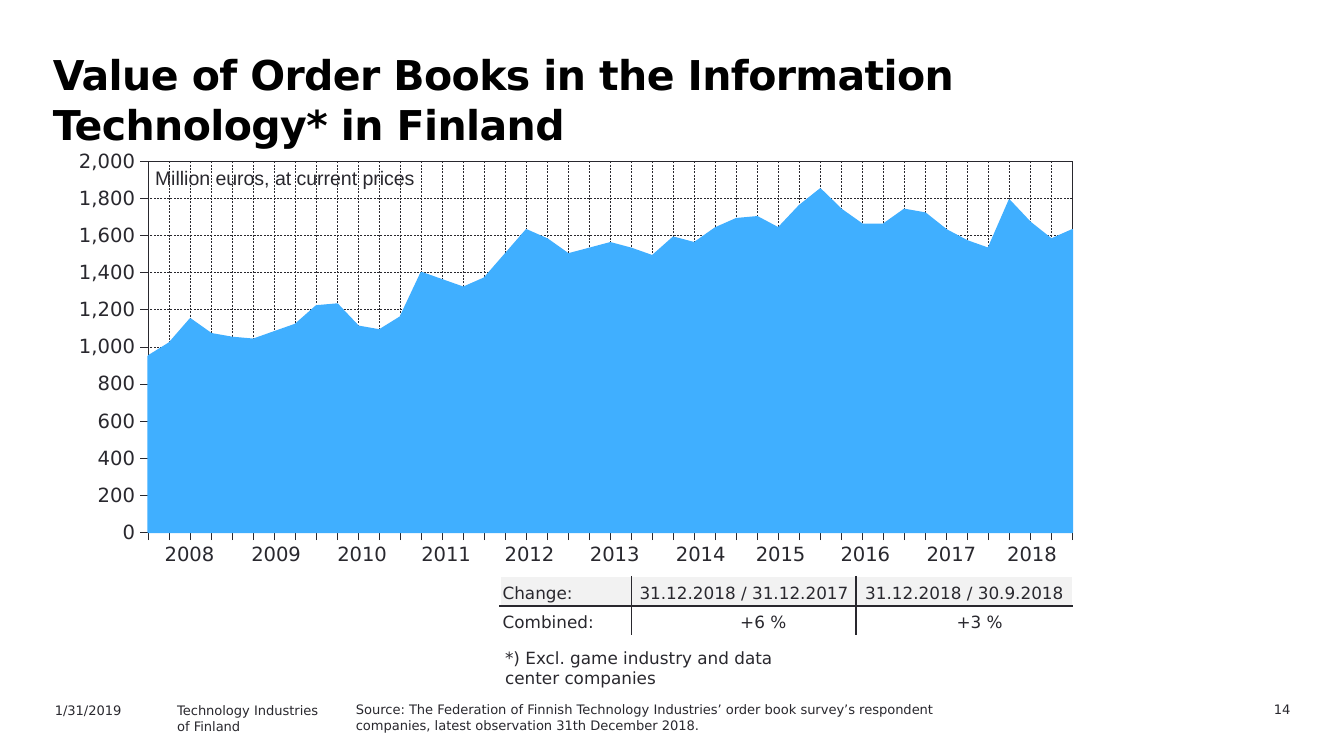
from lxml import etree
from pptx import Presentation
from pptx.chart.data import CategoryChartData
from pptx.dml.color import RGBColor
from pptx.enum.chart import XL_CHART_TYPE, XL_TICK_LABEL_POSITION, XL_TICK_MARK
from pptx.enum.dml import MSO_LINE
from pptx.enum.text import MSO_ANCHOR, PP_ALIGN
from pptx.oxml import parse_xml
from pptx.oxml.ns import nsdecls, qn
from pptx.util import Inches, Pt

COLORS = {"ink": "29282E", "black": "000000", "white": "FFFFFF",
          "area": "40AFFF", "header": "F2F2F2"}
COLS, ROWS = 100, 56.25
PLAIN_TABLE = "{2D5ABB26-0587-4C30-8999-92F81FD0307C}"
QUARTERS = [str(n) for n in range(1, 43)]
ORDERS = [950, 1020, 1150, 1070, 1050, 1040, 1080, 1120, 1220, 1230, 1110, 1090,
          1160, 1400, 1360, 1320, 1370, 1500, 1630, 1580, 1500, 1530, 1560, 1530,
          1490, 1590, 1560, 1640, 1690, 1700, 1640, 1760, 1850, 1740, 1660, 1660,
          1740, 1720, 1630, 1570, 1530, 1790, 1670, 1580, 1630]


def rgb(name):
    return RGBColor.from_string(COLORS[name])


class Deck:
    font = "DejaVu Sans"

    def __init__(self):
        self.prs = Presentation()
        self.prs.slide_width = Inches(10)
        self.prs.slide_height = self.prs.slide_width * 9 // 16
        self.s = self.prs.slides.add_slide(self.prs.slide_layouts[6])

    def x(self, cols):
        return round(self.prs.slide_width * cols / COLS)

    def y(self, rows):
        return round(self.prs.slide_height * rows / ROWS)

    def box(self, left, top, width, height):
        return self.x(left), self.y(top), self.x(width), self.y(height)

    def style(self, font, size, color="ink", bold=False, face=None):
        font.name, font.size, font.bold = face or self.font, Pt(size), bold
        font.color.rgb = rgb(color)

    def text(self, at, words, size, color="ink", bold=False, face=None,
             align=PP_ALIGN.LEFT, wrap=True):
        tf = self.s.shapes.add_textbox(*self.box(*at)).text_frame
        tf.word_wrap = wrap
        tf.text = words
        for p in tf.paragraphs:
            p.alignment = align
            for r in p.runs:
                self.style(r.font, size, color, bold, face)
        return tf

    def title(self, at, words):
        p = self.text(at, words, 22, "black", True).paragraphs[0]
        p.line_spacing = Pt(27)
        p._p.get_or_add_pPr().set("marL", str(self.x(0.15)))
        p.runs[0].font._element.set("spc", "-30")

    def table(self, at, widths, rows, size):
        tbl = self.s.shapes.add_table(len(rows), len(widths), *self.box(*at)).table
        tbl._tbl.tblPr.find(qn("a:tableStyleId")).text = PLAIN_TABLE
        tbl.first_row = tbl.horz_banding = False
        for col, width in zip(tbl.columns, widths):
            col.width = self.x(width)
        for row, words in zip(tbl.rows, rows):
            row.height = self.y(at[3] / len(rows))
            for cell, word in zip(row.cells, words):
                cell.text = word
                p = cell.text_frame.paragraphs[0]
                p.alignment = PP_ALIGN.CENTER
                self.style(p.runs[0].font, size)
                cell.fill.background()
        return tbl

    def ruled_table(self, at, widths, rows, size):
        tbl = self.table(at, widths, rows, size)
        last_row, last_col = len(rows) - 1, len(widths) - 1
        for i, row in enumerate(tbl.rows):
            for j, cell in enumerate(row.cells):
                cell.vertical_anchor = MSO_ANCHOR.BOTTOM
                cell.margin_left = cell.margin_right = self.x(0.2)
                cell.margin_top = cell.margin_bottom = self.y(0.2)
                p = cell.text_frame.paragraphs[0]
                if j == 0:
                    p.alignment = PP_ALIGN.LEFT
                elif i > 0:
                    p.alignment = PP_ALIGN.RIGHT
                    cell.margin_right = self.x(5.2)
                cell.fill.solid()
                cell.fill.fore_color.rgb = rgb("white" if i else "header")
                inner = {"L": j > 0, "R": j < last_col, "T": i > 0, "B": i < last_row}
                self.borders(cell, inner)

    def borders(self, cell, inner):
        tcPr = cell._tc.get_or_add_tcPr()
        for n, (side, ruled) in enumerate(inner.items()):
            color = COLORS["ink" if ruled else "white"]
            tcPr.insert(n, parse_xml(
                f'<a:ln{side} {nsdecls("a")} w="{Pt(1)}"><a:solidFill>'
                f'<a:srgbClr val="{color}"/></a:solidFill></a:ln{side}>'))

    def area_chart(self, at, categories, values, plot):
        data = CategoryChartData(number_format="#,##0")
        data.categories = categories
        data.add_series("Series 1", values)
        chart = self.s.shapes.add_chart(XL_CHART_TYPE.AREA_STACKED, *self.box(*at), data).chart
        chart.has_title = chart.has_legend = False
        self.style(chart.font, 18.2, bold=True, face="Arial")
        fmt = chart.plots[0].series[0].format
        fmt.fill.solid()
        fmt.fill.fore_color.rgb = rgb("area")
        fmt.line.color.rgb = rgb("area")
        fmt.line.width = Pt(0.88)
        for axis in (chart.category_axis, chart.value_axis):
            axis.major_tick_mark = XL_TICK_MARK.OUTSIDE
            axis.minor_tick_mark = XL_TICK_MARK.NONE
            axis.has_major_gridlines = True
            grid = axis.major_gridlines.format.line
            for line, width in ((axis.format.line, 0.22), (grid, 0.25)):
                line.color.rgb = rgb("ink")
                line.width = Pt(width)
            grid.dash_style = MSO_LINE.DASH
        chart.category_axis.tick_label_position = XL_TICK_LABEL_POSITION.NONE
        val = chart.value_axis
        val.minimum_scale, val.maximum_scale, val.major_unit = 0, 2000, 200
        val.tick_labels.number_format = "#,##0"
        val.tick_labels.number_format_is_linked = False
        self.style(val.tick_labels.font, 10.5)
        val._element.find(qn("c:crossBetween")).set("val", "midCat")
        self.frame_plot(chart, plot)

    def frame_plot(self, chart, plot):
        area = chart._chartSpace.chart.plotArea
        for old in area.findall(qn("c:layout")):
            area.remove(old)
        layout = parse_xml(f'<c:layout {nsdecls("c")}><c:manualLayout/></c:layout>')
        settings = [("layoutTarget", "inner"), ("xMode", "edge"), ("yMode", "edge"),
                    *zip("xywh", plot)]
        for tag, value in settings:
            etree.SubElement(layout[0], qn(f"c:{tag}")).set("val", str(value))
        area.insert(0, layout)
        area.append(parse_xml(
            f'<c:spPr {nsdecls("c", "a")}><a:noFill/><a:ln w="{Pt(0.22)}"><a:solidFill>'
            f'<a:srgbClr val="{COLORS["ink"]}"/></a:solidFill></a:ln></c:spPr>'))


def main():
    d = Deck()
    d.title((2.8, 3.1, 87.4, 7.1),
            "Value of Order Books in the Information Technology* in Finland")
    d.area_chart((4.15, 11.1, 91.8, 31.2), QUARTERS, ORDERS, (0.075, 0.029, 0.749, 0.885))
    d.table((11, 39.95, 68.9, 2.5),
            [6.2, 6.7, 6.1, 6.4, 6, 6.7, 6.1, 5.8, 6.8, 6, 6],
            [[str(year) for year in range(2008, 2019)]], 10.5)
    d.text((10.55, 11.85, 22.1, 2.7), "Million euros, at current prices", 10.5,
           face="Arial", wrap=False)
    d.ruled_table((37.2, 42.9, 42.7, 4.4), [9.8, 16.7, 16.1],
                  [["Change:", "31.12.2018 / 31.12.2017", "31.12.2018 / 30.9.2018"],
                   ["Combined:", "+6 %", "+3 %"]], 9)
    d.text((36.6, 47.7, 26.1, 4),
           "*) Excl. game industry and data center companies", 9)
    d.text((3.1, 51.8, 10, 1.8), "1/31/2019", 7)
    d.text((12.2, 51.8, 18, 1.8), "Technology Industries\nof Finland", 7)
    d.text((25.5, 51.7, 50.7, 1.8),
           "Source: The Federation of Finnish Technology Industries’ order book survey’s "
           "respondent companies, latest observation 31th December 2018.", 7)
    d.text((87.6, 51.7, 9.4, 1.8), "14", 7, align=PP_ALIGN.RIGHT)
    d.prs.save("out.pptx")


if __name__ == "__main__":
    main()
